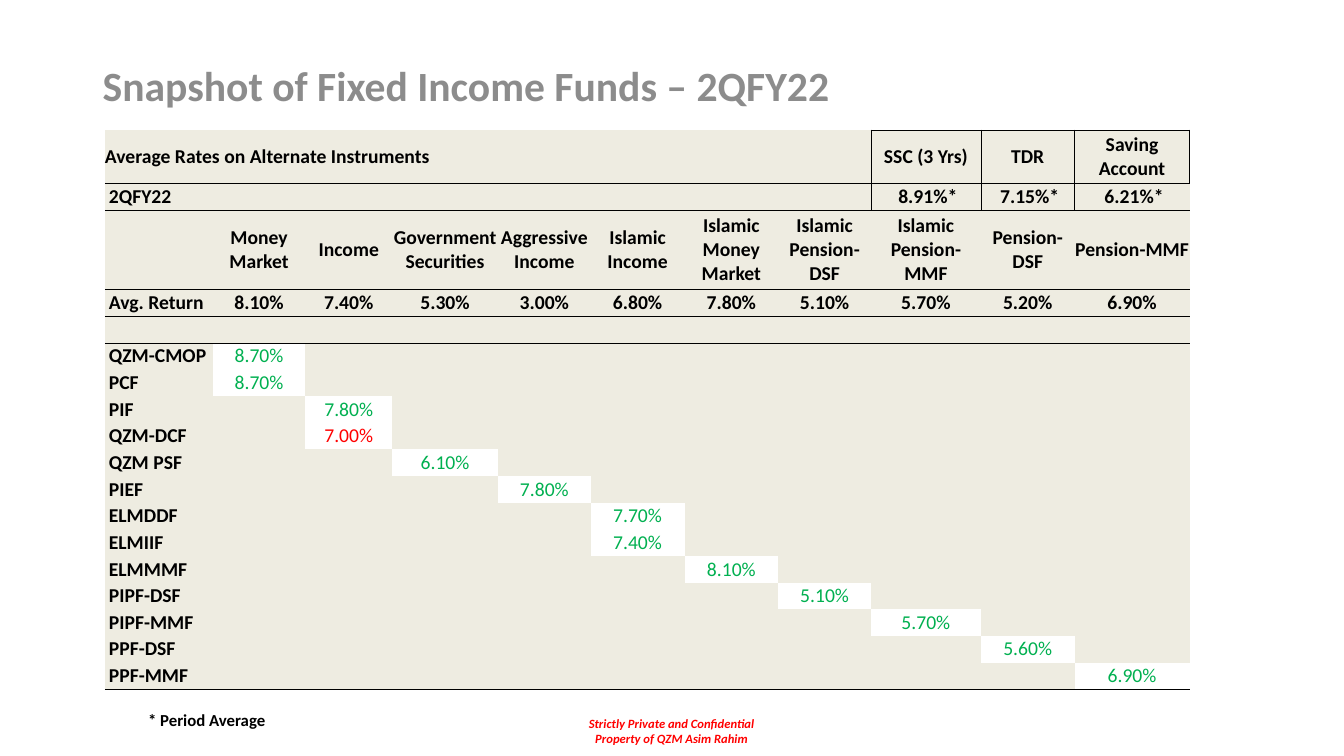
from dataclasses import dataclass

from lxml import etree
from pptx import Presentation
from pptx import util as u
from pptx.dml.color import RGBColor
from pptx.enum import text
from pptx.oxml import ns


@dataclass(frozen=True)
class Theme:
    font: str = "Calibri"
    black: str = "000000"
    gray: str = "8C8C8C"
    red: str = "FF0000"
    green: str = "00B050"
    beige: str = "EEECE1"
    white: str = "FFFFFF"
    title_size: float = 29.7
    table_size: float = 14
    note_size: float = 12
    footer_size: float = 9
    rule_width: float = 0.5
    no_table_style: str = "{2D5ABB26-0587-4C30-8999-92F81FD0307C}"


LEFT, CENTER = text.PP_ALIGN.LEFT, text.PP_ALIGN.CENTER
LABEL_INDENT = 0.04

COLUMN_WIDTHS = [1.07, 0.92, 0.86, 1.05, 0.92, 0.93, 0.93, 0.92, 1.09, 0.93, 1.14]
FUND_TYPES = [
    "Money Market", "Income", "Government Securities", "Aggressive Income",
    "Islamic Income", "Islamic Money Market", "Islamic Pension-DSF",
    "Islamic Pension-MMF", "Pension-DSF", "Pension-MMF",
]
AVERAGE_RETURNS = [
    "8.10%", "7.40%", "5.30%", "3.00%", "6.80%",
    "7.80%", "5.10%", "5.70%", "5.20%", "6.90%",
]
ALTERNATIVES = [("SSC (3 Yrs)", "8.91%*"), ("TDR", "7.15%*"), ("Saving Account", "6.21%*")]
FUNDS = [
    ("QZM-CMOP", 1, "8.70%"), ("PCF", 1, "8.70%"), ("PIF", 2, "7.80%"),
    ("QZM-DCF", 2, "7.00%"), ("QZM PSF", 3, "6.10%"), ("PIEF", 4, "7.80%"),
    ("ELMDDF", 5, "7.70%"), ("ELMIIF", 5, "7.40%"), ("ELMMMF", 6, "8.10%"),
    ("PIPF-DSF", 7, "5.10%"), ("PIPF-MMF", 8, "5.70%"),
    ("PPF-DSF", 9, "5.60%"), ("PPF-MMF", 10, "6.90%"),
]
BELOW_AVERAGE = {"QZM-DCF"}
FIRST_FUND_ROW = 5
FIRST_ALTERNATIVE = len(COLUMN_WIDTHS) - len(ALTERNATIVES)
ROW_COUNT = FIRST_FUND_ROW + len(FUNDS)
RULED_ROWS = {0, 1, 2, 3, ROW_COUNT - 1}
TABLE_HEIGHT, HEADER_HEIGHT, TYPES_HEIGHT = 5.55, 0.53, 0.79


def write(frame, content, *, font, size, color, bold=True, italic=False, align=LEFT):
    for index, line in enumerate(content.split("\n")):
        paragraph = frame.paragraphs[0] if index == 0 else frame.add_paragraph()
        paragraph.alignment = align
        run = paragraph.add_run()
        run.text = line
        run.font.name = font
        run.font.size = u.Pt(size)
        run.font.bold = bold
        run.font.italic = italic
        run.font.color.rgb = RGBColor.from_string(color)


def borders(row, column):
    sides = set()
    if row in RULED_ROWS:
        sides.add("B")
    if row - 1 in RULED_ROWS or (row == 0 and column >= FIRST_ALTERNATIVE):
        sides.add("T")
    if row < 2 and column >= FIRST_ALTERNATIVE:
        sides.add("L")
    if row < 2 and FIRST_ALTERNATIVE - 1 <= column < len(COLUMN_WIDTHS) - 1:
        sides.add("R")
    return sides


class SlideBuilder:
    def __init__(self, slide, theme):
        self.slide = slide
        self.theme = theme

    def text_box(self, content, left, top, width, height, *, wrap=True,
                 anchor=text.MSO_ANCHOR.TOP, **style):
        shape = self.slide.shapes.add_textbox(*map(u.Inches, (left, top, width, height)))
        frame = shape.text_frame
        frame.word_wrap = wrap
        frame.vertical_anchor = anchor
        write(frame, content, font=self.theme.font, **style)

    def table(self, left, top, column_widths, row_heights):
        shape = self.slide.shapes.add_table(
            len(row_heights), len(column_widths), u.Inches(left), u.Inches(top),
            u.Inches(sum(column_widths)), u.Inches(sum(row_heights)))
        table = shape.table
        table.first_row = table.horz_banding = False
        style = shape._element.find(".//" + ns.qn("a:tableStyleId"))
        style.text = self.theme.no_table_style
        for column, width in zip(table.columns, column_widths):
            column.width = u.Inches(width)
        for row, height in zip(table.rows, row_heights):
            row.height = u.Inches(height)
        return table

    def cell(self, cell, content, sides, *, fill, color, bold=True, align=CENTER, indent=0):
        cell.margin_left = u.Inches(indent)
        cell.margin_right = cell.margin_top = cell.margin_bottom = 0
        cell.vertical_anchor = text.MSO_ANCHOR.MIDDLE
        properties = cell._tc.get_or_add_tcPr()
        for side in "LRTB":
            if side in sides:
                self.border(properties, side)
        cell.fill.solid()
        cell.fill.fore_color.rgb = RGBColor.from_string(fill)
        size = self.theme.table_size
        if content:
            write(cell.text_frame, content, font=self.theme.font, size=size,
                  color=color, bold=bold, align=align)
        else:
            paragraph = cell.text_frame.paragraphs[0]
            etree.SubElement(paragraph._p, ns.qn("a:endParaRPr"), sz=str(size * 100))

    def border(self, properties, side):
        line = etree.SubElement(properties, ns.qn("a:ln" + side),
                                w=str(u.Pt(self.theme.rule_width)))
        fill = etree.SubElement(line, ns.qn("a:solidFill"))
        etree.SubElement(fill, ns.qn("a:srgbClr"), val=self.theme.black)


def table_rows():
    blanks = [""] * (FIRST_ALTERNATIVE - 1)
    names, rates = zip(*ALTERNATIVES)
    rows = [
        ["Average Rates on Alternate Instruments", *blanks, *names],
        ["2QFY22", *blanks, *rates],
        ["", *FUND_TYPES],
        ["Avg. Return", *AVERAGE_RETURNS],
        [""] * len(COLUMN_WIDTHS),
    ]
    for name, position, value in FUNDS:
        row = [name] + [""] * len(FUND_TYPES)
        row[position] = value
        rows.append(row)
    return rows


def add_returns_table(builder):
    theme = builder.theme
    plain_height = (TABLE_HEIGHT - HEADER_HEIGHT - TYPES_HEIGHT) / (ROW_COUNT - 2)
    heights = [plain_height] * ROW_COUNT
    heights[0], heights[2] = HEADER_HEIGHT, TYPES_HEIGHT
    table = builder.table(1.04, 1.29, COLUMN_WIDTHS, heights)
    for row, contents in enumerate(table_rows()):
        for column, content in enumerate(contents):
            style = {"fill": theme.beige, "color": theme.black}
            if column == 0:
                style.update(align=LEFT, indent=LABEL_INDENT if row else 0)
            elif row >= FIRST_FUND_ROW and content:
                value_color = theme.red if contents[0] in BELOW_AVERAGE else theme.green
                style.update(fill=theme.white, color=value_color, bold=False)
            elif row == 1:
                style.update(indent=LABEL_INDENT)
            builder.cell(table.cell(row, column), content, borders(row, column), **style)
    table.cell(0, 0).merge(table.cell(0, FIRST_ALTERNATIVE - 1))


def main():
    presentation = Presentation()
    presentation.slide_width = u.Inches(13.33)
    presentation.slide_height = u.Inches(7.5)
    theme = Theme()
    builder = SlideBuilder(presentation.slides.add_slide(presentation.slide_layouts[6]), theme)
    builder.text_box("Strictly Private and Confidential\nProperty of QZM Asim Rahim",
                     5.73, 7.05, 1.86, 0.4, wrap=False, size=theme.footer_size,
                     color=theme.red, italic=True, align=CENTER)
    builder.text_box("Snapshot of Fixed Income Funds – 2QFY22", 0.92, 0.4, 11.5, 0.89,
                     anchor=text.MSO_ANCHOR.MIDDLE, size=theme.title_size, color=theme.gray)
    add_returns_table(builder)
    builder.text_box("* Period Average", 1.37, 6.99, 3.06, 0.3,
                     size=theme.note_size, color=theme.black)
    presentation.save("out.pptx")


if __name__ == "__main__":
    main()
